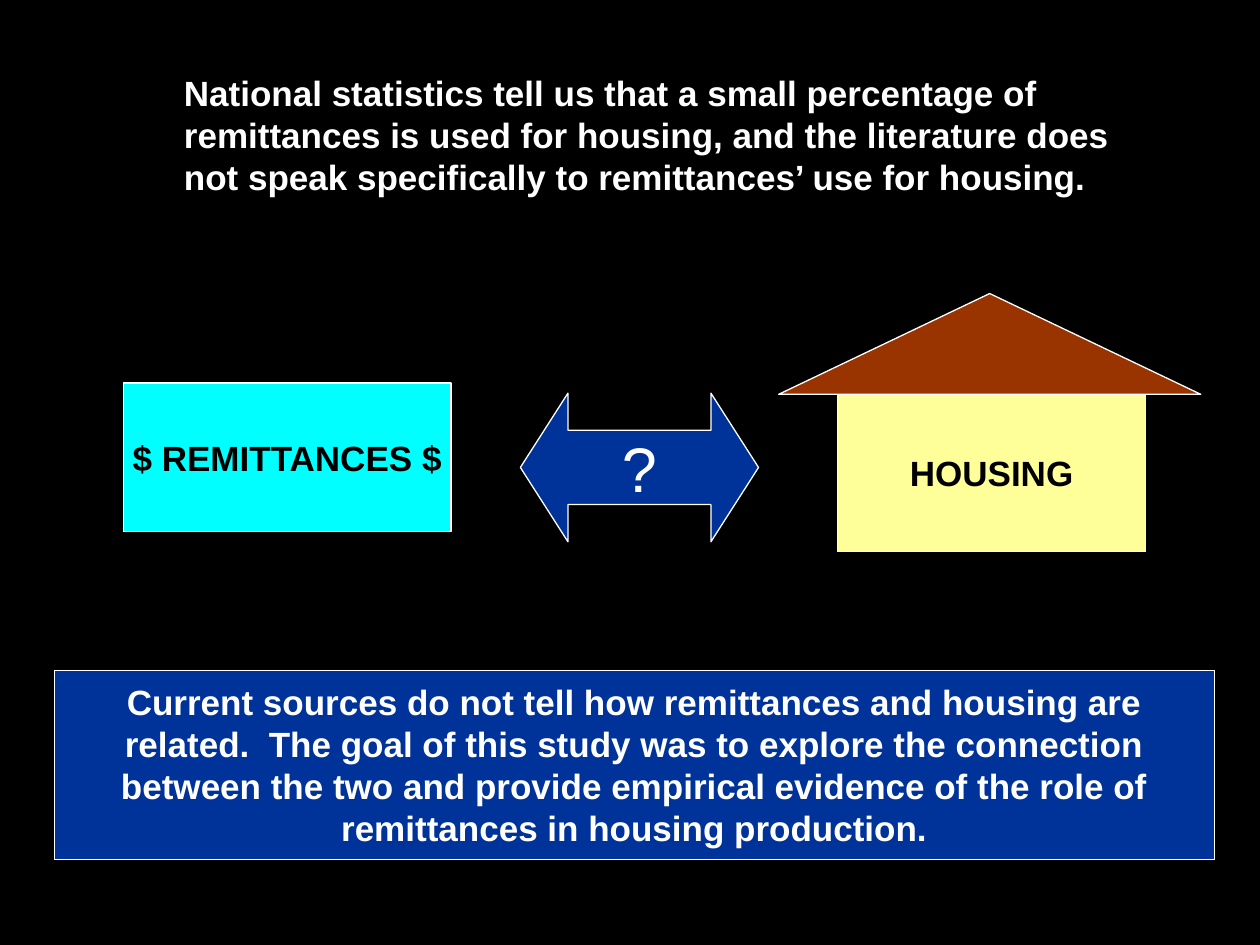
from dataclasses import dataclass

from pptx import Presentation
from pptx.dml.color import RGBColor
from pptx.enum.shapes import MSO_SHAPE
from pptx.enum.text import MSO_ANCHOR, MSO_AUTO_SIZE, PP_ALIGN
from pptx.util import Inches, Pt

COLS, ROWS = 100, 75
WIDTH, HEIGHT = Inches(10), Inches(7.5)
HEADLINE = ("National statistics tell us that a small percentage of remittances "
            "is used for housing, and the literature does not speak specifically "
            "to remittances’ use for housing.")
GOAL = ("Current sources do not tell how remittances and housing are related.  "
        "The goal of this study was to explore the connection between the two "
        "and provide empirical evidence of the role of remittances in housing "
        "production.")


@dataclass(frozen=True)
class Theme:
    """Colours, font and type sizes of the slide."""
    black: str = "000000"
    white: str = "FFFFFF"
    navy: str = "003399"
    cyan: str = "00FFFF"
    wall: str = "FFFF99"
    roof: str = "993300"
    font: str = "Arial"
    body: int = 20
    symbol: int = 36
    line: float = 0.75


THEME = Theme()


def apply(obj, values):
    """Set each attribute of obj from a dict."""
    for name, value in values.items():
        setattr(obj, name, value)


def grid(col, row, cols, rows):
    """Turn grid columns and rows into a position and size."""
    return {"left": round(WIDTH * col / COLS), "top": round(HEIGHT * row / ROWS),
            "width": round(WIDTH * cols / COLS), "height": round(HEIGHT * rows / ROWS)}


def write(sp, text, color, size=THEME.body, bold=True, align=PP_ALIGN.CENTER, **frame):
    """Put one formatted paragraph into a shape."""
    tf = sp.text_frame
    apply(tf, {"auto_size": MSO_AUTO_SIZE.NONE, "word_wrap": True,
               "vertical_anchor": MSO_ANCHOR.MIDDLE, **frame})
    p = tf.paragraphs[0]
    apply(p, {"alignment": align, "line_spacing": 1.0})
    r = p.add_run()
    r.text = text
    apply(r.font, {"name": THEME.font, "size": Pt(size), "bold": bold})
    r.font.color.rgb = RGBColor.from_string(color)


def add_headline(s, text, box):
    """Move the title placeholder and fill it with the opening statement."""
    sp = s.shapes.title
    apply(sp, box)
    write(sp, text, THEME.white, align=PP_ALIGN.LEFT,
          vertical_anchor=MSO_ANCHOR.TOP, margin_left=Inches(0.48))


def add_block(s, kind, box, fill, adjust=()):
    """Add a filled preset shape with a thin white outline."""
    sp = s.shapes.add_shape(kind, **box)
    sp.shadow.inherit = False
    sp.fill.solid()
    sp.fill.fore_color.rgb = RGBColor.from_string(fill)
    sp.line.color.rgb = RGBColor.from_string(THEME.white)
    sp.line.width = Pt(THEME.line)
    for i, value in enumerate(adjust):
        sp.adjustments[i] = value
    return sp


def add_house(s, text, eaves):
    """Add the house: a labelled wall with a roof resting on it."""
    wall = add_block(s, MSO_SHAPE.RECTANGLE, grid(66.5, eaves, 24.4, 12.6), THEME.wall)
    write(wall, text, THEME.black, word_wrap=False)
    add_block(s, MSO_SHAPE.ISOSCELES_TRIANGLE, grid(61.8, eaves - 7.9, 33.5, 8), THEME.roof)


def main():
    """Build and save the slide."""
    prs = Presentation()
    apply(prs, {"slide_width": WIDTH, "slide_height": HEIGHT})
    s = prs.slides.add_slide(prs.slide_layouts[5])
    s.background.fill.solid()
    s.background.fill.fore_color.rgb = RGBColor.from_string(THEME.black)

    left, eaves, band = 9.8, 31.2, 11.8
    add_headline(s, HEADLINE, grid(left, 5.2, 83.5, band))
    add_house(s, "HOUSING", eaves)
    arrow = add_block(s, MSO_SHAPE.LEFT_RIGHT_ARROW, grid(41.3, eaves, 18.9, band),
                      THEME.navy, (0.5, 0.32))
    write(arrow, "?", THEME.white, THEME.symbol, bold=False, word_wrap=False)
    money = add_block(s, MSO_SHAPE.RECTANGLE, grid(left, 30.4, 26, band), THEME.cyan)
    write(money, "$ REMITTANCES $", THEME.black, word_wrap=False)
    goal = add_block(s, MSO_SHAPE.RECTANGLE, grid(4.3, 53.2, 92.1, 15), THEME.navy)
    write(goal, GOAL, THEME.white)

    prs.save("out.pptx")


if __name__ == "__main__":
    main()
